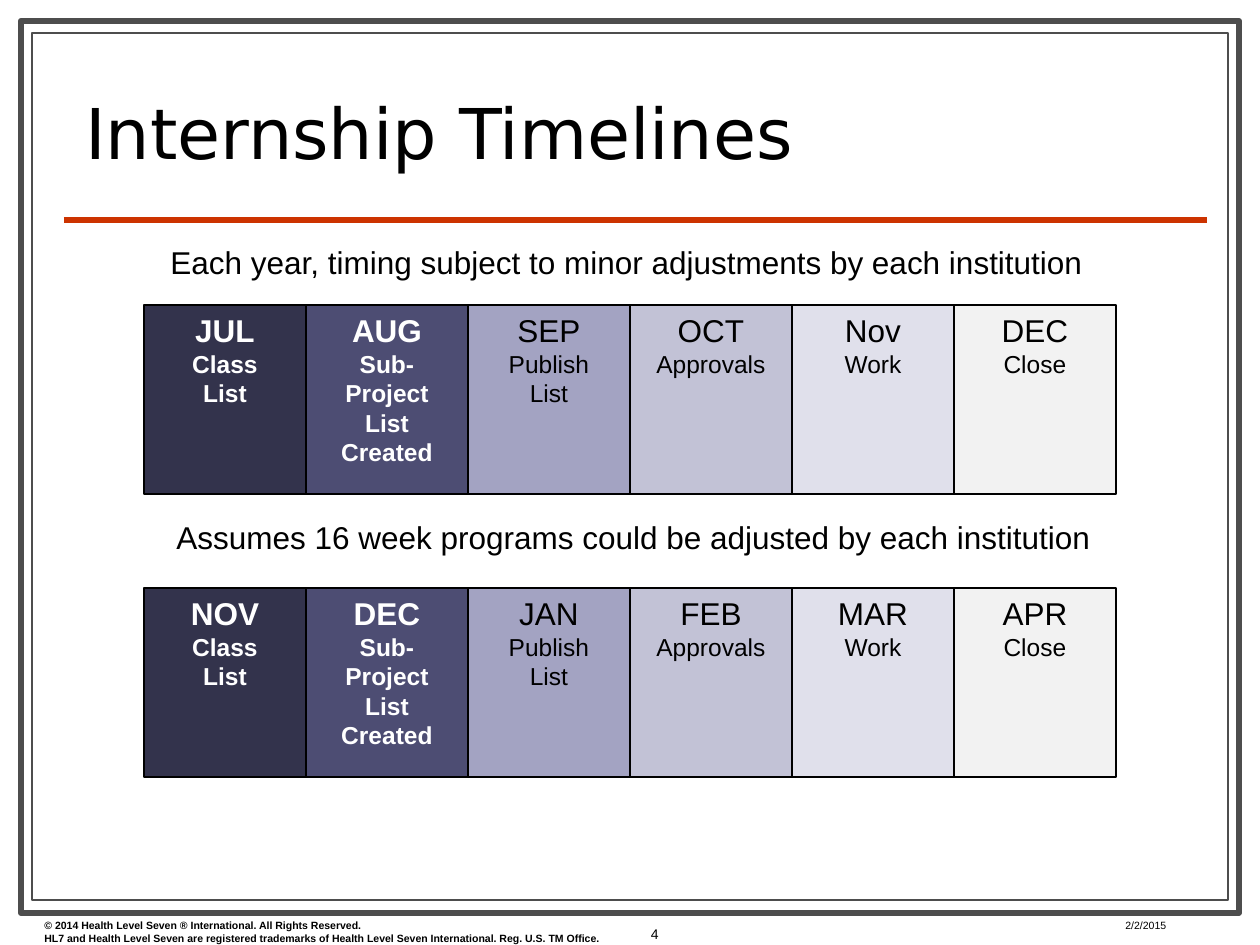
"""Build the internship timelines slide with two six-month schedules."""
from lxml import etree
from pptx import Presentation
from pptx.dml.color import RGBColor
from pptx.enum.shapes import MSO_CONNECTOR, MSO_SHAPE
from pptx.enum.text import MSO_ANCHOR, PP_ALIGN
from pptx.oxml.ns import qn
from pptx.util import Emu, Pt

RECTANGLE = MSO_SHAPE.RECTANGLE
STRAIGHT = MSO_CONNECTOR.STRAIGHT
TOP, MIDDLE, BOTTOM = MSO_ANCHOR.TOP, MSO_ANCHOR.MIDDLE, MSO_ANCHOR.BOTTOM
LEFT, CENTER, RIGHT = PP_ALIGN.LEFT, PP_ALIGN.CENTER, PP_ALIGN.RIGHT
PX = 914400 / 126
COLORS = {
    "white": "FFFFFF", "black": "000000", "frame": "4D4D4D", "rule": "CC3300",
    "class": "33334C", "project": "4D4D73", "publish": "A3A3C2",
    "approvals": "C2C2D6", "work": "E0E0EB", "close": "F2F2F2",
}

presentation = Presentation()
presentation.slide_width = Emu(round(1260 * PX))
presentation.slide_height = Emu(round(945 * PX))
slide = presentation.slides.add_slide(presentation.slide_layouts[6])


def add_rectangle(box, fill, line, width):
    shape = slide.shapes.add_shape(RECTANGLE, *[Emu(round(n * PX)) for n in box])
    shape.shadow.inherit = False
    shape.fill.solid()
    shape.fill.fore_color.rgb = RGBColor.from_string(COLORS[fill])
    shape.line.color.rgb = RGBColor.from_string(COLORS[line])
    shape.line.width = Pt(width)
    return shape


def write(shape, lines, sizes, color="black", bold=False, align=LEFT,
          anchor=TOP, font="Arial", wrap=True):
    frame = shape.text_frame
    frame.word_wrap = wrap
    frame.vertical_anchor = anchor
    frame.text = "\n".join(lines)
    for index, paragraph in enumerate(frame.paragraphs):
        paragraph.alignment = align
        paragraph.font.name = font
        paragraph.font.size = Pt(sizes[min(index, len(sizes) - 1)])
        paragraph.font.bold = bold
        paragraph.font.color.rgb = RGBColor.from_string(COLORS[color])


add_rectangle((21, 21, 1218, 892), "white", "frame", 3.5)
add_rectangle((32, 33, 1196, 867), "white", "frame", 0.75)

title_rule = slide.shapes.add_connector(
    STRAIGHT, *[Emu(round(n * PX)) for n in (64, 220, 1207, 220)])
title_rule.line.color.rgb = RGBColor.from_string(COLORS["rule"])
title_rule.line.width = Pt(3)
etree.SubElement(title_rule._element.spPr, qn("a:effectLst"))

texts = [
    ((32, 913, 608, 38),
     ["© 2014 Health Level Seven ® International. All Rights Reserved.",
      "HL7 and Health Level Seven are registered trademarks of "
      "Health Level Seven International. Reg. U.S. TM Office."],
     6, {"bold": True}),
    ((73, 66, 1124, 113), ["Internship Timelines"], 40,
     {"font": "DejaVu Sans", "anchor": BOTTOM}),
    ((1113, 913, 116, 21), ["2/2/2015"], 6, {}),
    ((598, 901, 73, 66), ["4"], 8, {"align": RIGHT, "anchor": MIDDLE}),
    ((158, 237, 946, 50),
     ["Each year, timing subject to minor adjustments by each institution"],
     18, {"wrap": False}),
    ((164, 512, 939, 50),
     ["Assumes 16 week programs could be adjusted by each institution"],
     18, {"wrap": False}),
]
for box, lines, size, style in texts:
    text_box = slide.shapes.add_textbox(*[Emu(round(n * PX)) for n in box])
    write(text_box, lines, [size], **style)
    if "Internship Timelines" in lines:
        text_box.text_frame.paragraphs[0].line_spacing = 0.8

stages = [
    ("class", ["Class", "List"], True),
    ("project", ["Sub-", "Project", "List", "Created"], True),
    ("publish", ["Publish", "List"], False),
    ("approvals", ["Approvals"], False),
    ("work", ["Work"], False),
    ("close", ["Close"], False),
]
timelines = [
    (305, ["JUL", "AUG", "SEP", "OCT", "Nov", "DEC"]),
    (588, ["NOV", "DEC", "JAN", "FEB", "MAR", "APR"]),
]
for top, months in timelines:
    for column, (month, (fill, task, dark)) in enumerate(zip(months, stages)):
        cell = add_rectangle((144 + 162 * column, top, 162, 189), fill, "black", 0.75)
        write(cell, [month, *task], [18, 14], "white" if dark else "black",
              dark, CENTER)

presentation.save("out.pptx")
